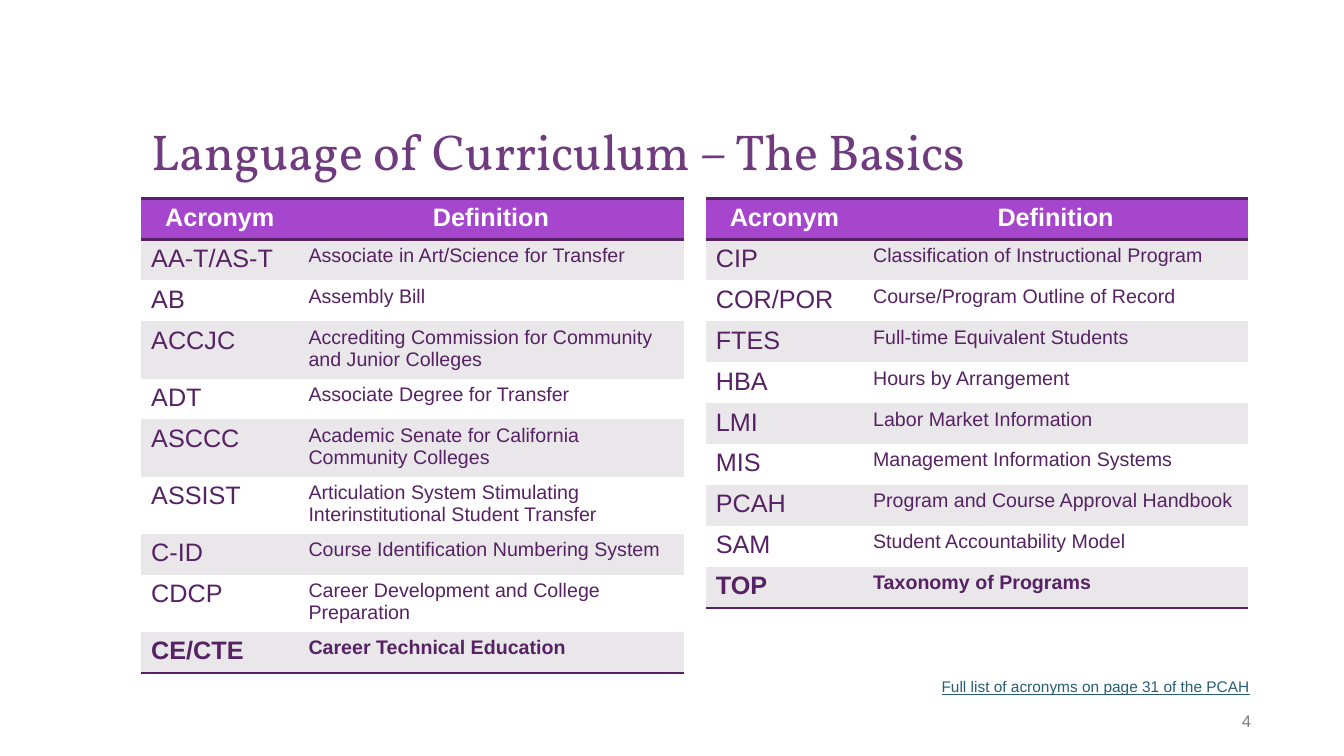
from lxml import etree
from pptx import Presentation
from pptx.dml.color import RGBColor
from pptx.enum.text import MSO_ANCHOR, PP_ALIGN
from pptx.oxml.ns import qn
from pptx.util import Inches, Pt

BOTTOM, MIDDLE, TOP = MSO_ANCHOR.BOTTOM, MSO_ANCHOR.MIDDLE, MSO_ANCHOR.TOP
LEFT, CENTER, RIGHT = PP_ALIGN.LEFT, PP_ALIGN.CENTER, PP_ALIGN.RIGHT

TITLE_PURPLE = RGBColor(0x70, 0x3B, 0x7E)
HEADER_PURPLE = RGBColor(0xA6, 0x46, 0xCC)
DARK_PURPLE = RGBColor(0x56, 0x22, 0x63)
BAND_GRAY = RGBColor(0xE9, 0xE7, 0xEA)
NUMBER_GRAY = RGBColor(0x7F, 0x7F, 0x7F)
LINK_TEAL = RGBColor(0x26, 0x5E, 0x76)
WHITE = RGBColor(0xFF, 0xFF, 0xFF)

BODY_FONT = "Arial"
TITLE_FONT = "Vollkorn"
PLAIN_TABLE_STYLE = "{2D5ABB26-0587-4C30-8999-92F81FD0307C}"

TABLE_TOP = 1.97
COLUMN_WIDTHS = (1.56, 3.82)
COLUMN_SIZES = (18, 14)
MIN_TABLE_HEIGHT = 4.06

HEADER = ("Acronym", "Definition")
ACRONYMS_A_TO_C = [
    ("AA-T/AS-T", "Associate in Art/Science for Transfer"),
    ("AB", "Assembly Bill"),
    ("ACCJC", "Accrediting Commission for Community and Junior Colleges"),
    ("ADT", "Associate Degree for Transfer"),
    ("ASCCC", "Academic Senate for California Community Colleges"),
    ("ASSIST", "Articulation System Stimulating Interinstitutional Student Transfer"),
    ("C-ID", "Course Identification Numbering System"),
    ("CDCP", "Career Development and College Preparation"),
    ("CE/CTE", "Career Technical Education"),
]
ACRONYMS_C_TO_T = [
    ("CIP", "Classification of Instructional Program"),
    ("COR/POR", "Course/Program Outline of Record"),
    ("FTES", "Full-time Equivalent Students"),
    ("HBA", "Hours by Arrangement"),
    ("LMI", "Labor Market Information"),
    ("MIS", "Management Information Systems"),
    ("PCAH", "Program and Course Approval Handbook"),
    ("SAM", "Student Accountability Model"),
    ("TOP", "Taxonomy of Programs"),
]


def add_run(paragraph, text, size, color, font=BODY_FONT, bold=False, underline=False):
    run = paragraph.add_run()
    run.text = text
    run.font.name = font
    run.font.size = Pt(size)
    run.font.bold = bold
    run.font.underline = underline
    run.font.color.rgb = color


def add_text(slide, text, box, size, color, anchor=TOP, align=LEFT,
             right_inset=0.1, line_spacing=1.0, **run_format):
    frame = slide.shapes.add_textbox(*map(Inches, box)).text_frame
    frame.word_wrap = True
    frame.vertical_anchor = anchor
    frame.margin_right = Inches(right_inset)
    paragraph = frame.paragraphs[0]
    paragraph.alignment = align
    paragraph.line_spacing = line_spacing
    add_run(paragraph, text, size, color, **run_format)


def add_rule(cell, side):
    """Draw a dark line on one cell edge: side is "T" or "B". Call before filling."""
    line = etree.SubElement(cell._tc.get_or_add_tcPr(), qn(f"a:ln{side}"), w=str(Pt(2)))
    fill = etree.SubElement(line, qn("a:solidFill"))
    etree.SubElement(fill, qn("a:srgbClr"), val=str(DARK_PURPLE))


def fill_cell(cell, text, size, color, background, bold=False, align=LEFT, rules=""):
    for side in rules:
        add_rule(cell, side)
    cell.fill.solid()
    cell.fill.fore_color.rgb = background
    paragraph = cell.text_frame.paragraphs[0]
    paragraph.alignment = align
    add_run(paragraph, text, size, color, bold=bold)


def add_acronym_table(slide, left, entries):
    row_count = len(entries) + 1
    table = slide.shapes.add_table(
        row_count, len(HEADER), Inches(left), Inches(TABLE_TOP),
        Inches(sum(COLUMN_WIDTHS)), Inches(MIN_TABLE_HEIGHT)).table
    table._tbl.tblPr.find(qn("a:tableStyleId")).text = PLAIN_TABLE_STYLE
    for column, width in zip(table.columns, COLUMN_WIDTHS):
        column.width = Inches(width)
    for index, heading in enumerate(HEADER):
        fill_cell(table.cell(0, index), heading, 18, WHITE, HEADER_PURPLE,
                  bold=True, align=CENTER, rules="TB")
    for row, entry in enumerate(entries, start=1):
        is_last = row == len(entries)
        background = BAND_GRAY if row % 2 else WHITE
        for index, (text, size) in enumerate(zip(entry, COLUMN_SIZES)):
            fill_cell(table.cell(row, index), text, size, DARK_PURPLE, background,
                      bold=is_last, rules="B" if is_last else "")


def main():
    prs = Presentation()
    prs.slide_width, prs.slide_height = Inches(13.33), Inches(7.5)
    slide = prs.slides.add_slide(prs.slide_layouts[6])

    add_text(slide, "Language of Curriculum – The Basics", (1.4, 0.4, 10.99, 1.45),
             36, TITLE_PURPLE, anchor=BOTTOM, line_spacing=0.9, font=TITLE_FONT)
    add_text(slide, "4", (11.41, 6.95, 1, 0.4), 12, NUMBER_GRAY,
             anchor=MIDDLE, align=RIGHT, right_inset=0)
    add_acronym_table(slide, 1.4, ACRONYMS_A_TO_C)
    add_acronym_table(slide, 7, ACRONYMS_C_TO_T)
    add_text(slide, "Full list of acronyms on page 31 of the PCAH",
             (9.24, 6.67, 3.42, 0.29), 11, LINK_TEAL, underline=True)

    prs.save("out.pptx")


if __name__ == "__main__":
    main()
